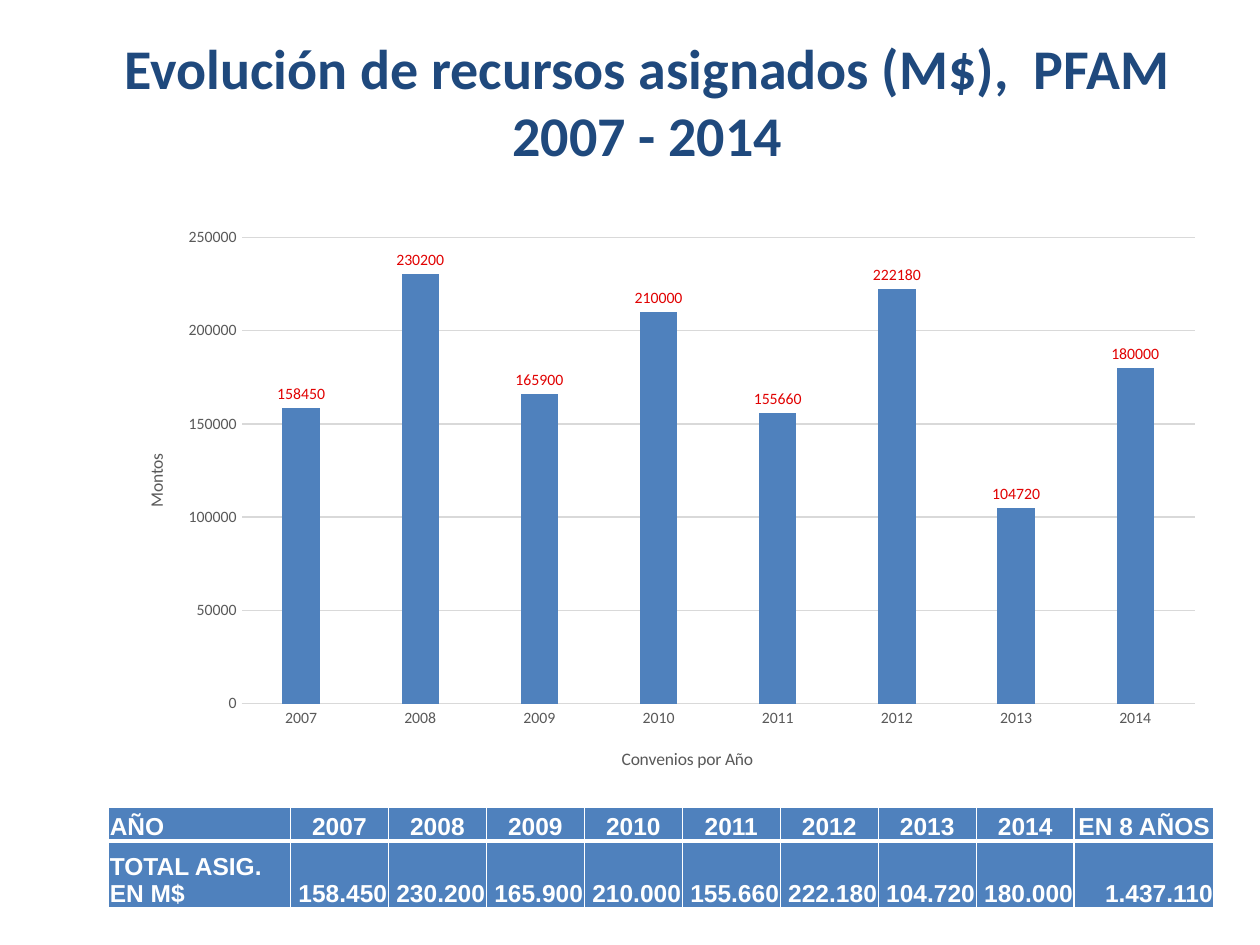
from lxml import etree
from pptx import Presentation
from pptx.chart.data import CategoryChartData
from pptx.dml.color import RGBColor
from pptx.enum import chart as charts, text
from pptx.oxml import ns
from pptx.util import Pt

COLORS = {"blue": "4F81BD", "navy": "1F497D", "red": "E10202",
          "gray": "595959", "grid": "D9D9D9", "white": "FFFFFF", "black": "000000"}
AMOUNTS = {"2007": 158450, "2008": 230200, "2009": 165900, "2010": 210000,
           "2011": 155660, "2012": 222180, "2013": 104720, "2014": 180000}
TOTAL = "1.437.110"


def color(name):
    return RGBColor.from_string(COLORS[name])


def style_font(font, size, name, shade, bold=False):
    font.size, font.name, font.bold = Pt(size), name, bold
    font.color.rgb = color(shade)


def write(frame, content, size=14, name="Arial", shade="white", bold=True,
          align=text.PP_ALIGN.LEFT):
    para = frame.paragraphs[0]
    para.alignment = align
    span = para.add_run()
    span.text = content
    style_font(span.font, size, name, shade, bold)


def set_layout(parent, index, inner=False, **fractions):
    """Place a chart part by fractions of the chart area."""
    for old in parent.findall(ns.qn("c:layout")):
        parent.remove(old)
    layout = etree.Element(ns.qn("c:layout"))
    manual = etree.SubElement(layout, ns.qn("c:manualLayout"))
    if inner:
        etree.SubElement(manual, ns.qn("c:layoutTarget"), val="inner")
    for key in ("xMode", "yMode"):
        etree.SubElement(manual, ns.qn(f"c:{key}"), val="edge")
    for key, value in fractions.items():
        etree.SubElement(manual, ns.qn(f"c:{key}"), val=str(value))
    parent.insert(index, layout)


def add_title(page, left, top, width, height):
    box = page.shapes.title
    box.left, box.top, box.width, box.height = map(Pt, (left, top, width, height))
    frame = box.text_frame
    frame.word_wrap = True
    frame.auto_size = text.MSO_AUTO_SIZE.SHAPE_TO_FIT_TEXT
    write(frame, "Evolución de recursos asignados (M$),  PFAM 2007 - 2014",
          size=32, name="Calibri", shade="navy", align=text.PP_ALIGN.CENTER)


def style_axis(axis, title, x, y):
    axis.major_tick_mark = axis.minor_tick_mark = charts.XL_TICK_MARK.NONE
    style_font(axis.tick_labels.font, 9, "Calibri", "gray")
    frame = axis.axis_title.text_frame
    write(frame, title, size=10, name="Calibri", shade="gray", bold=False,
          align=text.PP_ALIGN.CENTER)
    set_layout(axis.axis_title._element, 1, x=x, y=y)
    return frame


def add_amount_chart(page, left, top, width, height):
    data = CategoryChartData(number_format="General")
    data.categories = list(AMOUNTS)
    data.add_series("Series 1", list(AMOUNTS.values()))
    chart = page.shapes.add_chart(
        charts.XL_CHART_TYPE.COLUMN_CLUSTERED,
        *map(Pt, (left, top, width, height)), data).chart
    chart.has_title = chart.has_legend = False
    style_font(chart.font, 10, "Calibri", "black")

    # Axes and grid
    years, amounts = chart.category_axis, chart.value_axis
    style_axis(years, "Convenios por Año", 0.46, 0.92)
    years.format.line.color.rgb = color("grid")
    years.format.line.width = Pt(0.75)
    frame = style_axis(amounts, "Montos", 0.03, 0.41)
    frame._txBody.bodyPr.set("rot", "-5400000")
    frame._txBody.bodyPr.set("vert", "horz")
    amounts.minimum_scale, amounts.maximum_scale = 0, 250000
    amounts.major_unit = 50000
    amounts.format.line.fill.background()
    grid = amounts.major_gridlines.format.line
    grid.color.rgb, grid.width = color("grid"), Pt(0.75)

    # Columns and their labels
    plot = chart.plots[0]
    plot.vary_by_categories = False
    plot.gap_width, plot.overlap = 219, -27
    series = plot.series[0]
    series.format.fill.solid()
    series.format.fill.fore_color.rgb = color("blue")
    labels = series.data_labels
    labels.show_value = True
    labels.position = charts.XL_LABEL_POSITION.OUTSIDE_END
    style_font(labels.font, 9, "Calibri", "red")
    plot_area = chart._chartSpace.find(".//" + ns.qn("c:plotArea"))
    set_layout(plot_area, 0, inner=True, x=0.12, y=0.04, w=0.86, h=0.81)


def set_borders(cell, **widths):
    properties = cell._tc.get_or_add_tcPr()
    for index, (side, width) in enumerate(widths.items()):
        line = etree.Element(ns.qn(f"a:ln{side}"), w=str(Pt(width)))
        fill = etree.SubElement(line, ns.qn("a:solidFill"))
        etree.SubElement(fill, ns.qn("a:srgbClr"), val=COLORS["white"])
        properties.insert(index, line)


def add_amount_table(page, left, top, width, height):
    aligns = text.PP_ALIGN
    values = [f"{amount:,}".replace(",", ".") for amount in AMOUNTS.values()]
    rows = [(["AÑO", *AMOUNTS, "EN 8 AÑOS"], aligns.CENTER, 1, 3),
            (["TOTAL ASIG. EN M$", *values, TOTAL], aligns.RIGHT, 3, 1)]
    count = len(AMOUNTS) + 2
    table = page.shapes.add_table(
        len(rows), count, *map(Pt, (left, top, width, height))).table
    first, last = 104, 80
    year_width = (width - first - last) / len(AMOUNTS)
    for column, size in zip(table.columns, [first, *[year_width] * len(AMOUNTS), last]):
        column.width = Pt(size)
    for row, share in zip(table.rows, (1 / 3, 2 / 3)):
        row.height = Pt(height * share)
    for r, (contents, align, above, below) in enumerate(rows):
        for c, content in enumerate(contents):
            cell = table.cell(r, c)
            cell.fill.solid()
            cell.fill.fore_color.rgb = color("blue")
            cell.vertical_anchor = text.MSO_ANCHOR.BOTTOM
            cell.margin_left = cell.margin_right = cell.margin_top = Pt(0.75)
            cell.margin_bottom = 0
            write(cell.text_frame, content, align=align if c else aligns.LEFT)
            set_borders(cell, L=1, R=1, T=above, B=below)


def main():
    deck = Presentation()
    deck.slide_width, deck.slide_height = Pt(720), Pt(540)
    page = deck.slides.add_slide(deck.slide_layouts[5])
    add_amount_chart(page, 62, 122.5, 633.5, 329)
    add_title(page, 46, 15, 648, 85)
    add_amount_table(page, 62, 461.5, 632, 57.5)
    deck.save("out.pptx")


if __name__ == "__main__":
    main()
